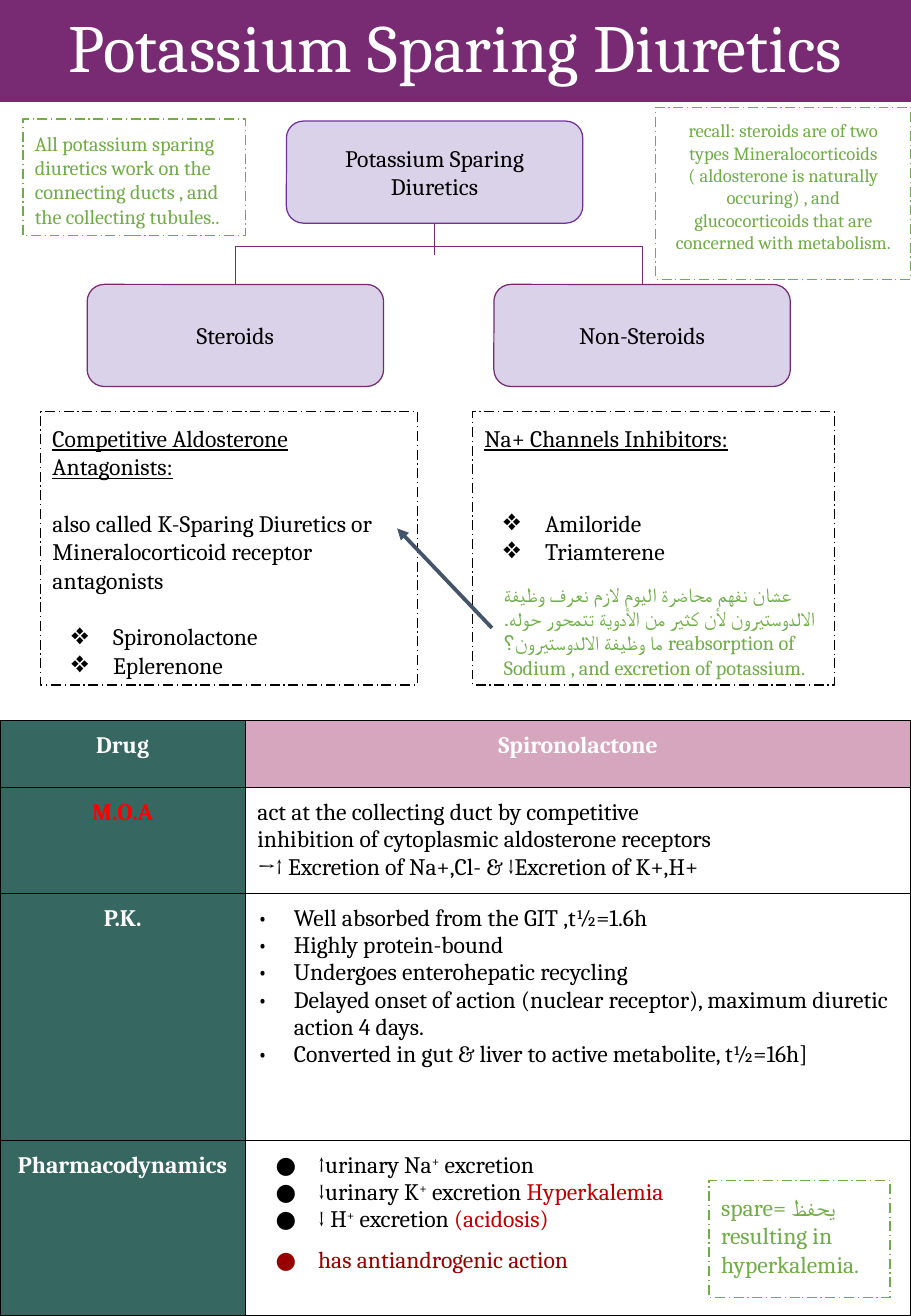
from dataclasses import dataclass
from typing import Any, Optional

import lxml.etree
import pptx
import pptx.dml.color
import pptx.enum.dml
import pptx.enum.shapes
import pptx.enum.text
import pptx.oxml.ns
import pptx.util

Pt = pptx.util.Pt
qn = pptx.oxml.ns.qn
Align = pptx.enum.text.PP_ALIGN
Anchor = pptx.enum.text.MSO_ANCHOR
Preset = pptx.enum.shapes.MSO_SHAPE


@dataclass(frozen=True)
class Theme:
    font: str = "Cambria"
    title_size: float = 40
    body_size: float = 14
    note_size: float = 12
    recall_size: float = 11
    purple: str = "782A72"
    violet: str = "7030A0"
    lavender: str = "D9D2E9"
    teal: str = "376761"
    pink: str = "D5A6BD"
    green: str = "70AD47"
    slate: str = "44546A"
    red: str = "FF0000"
    crimson: str = "C00000"
    maroon: str = "980000"
    black: str = "000000"
    white: str = "FFFFFF"


THEME = Theme()
MARGIN = 7.2
BLANK_LINE = 16.8


@dataclass(frozen=True)
class Piece:
    text: str
    color: Optional[str] = None
    superscript: bool = False


@dataclass(frozen=True)
class Line:
    pieces: tuple[Piece, ...]
    bullet: str = ""
    bullet_color: str = THEME.black
    indent: float = 36
    hanging: float = 25.2
    space_before: float = 0
    spacing: float = 1
    underline: bool = False


@dataclass(frozen=True)
class Box:
    left: float
    top: float
    width: float
    height: float
    lines: tuple[Line, ...]
    fill: Optional[str] = None
    outline: Optional[str] = None
    dashed: bool = False
    rounded: bool = False
    centered: bool = False
    anchor: Any = Anchor.TOP
    size: float = THEME.body_size
    color: str = THEME.black


@dataclass(frozen=True)
class Row:
    height: float
    label: str
    lines: tuple[Line, ...]
    label_color: str = THEME.white


def line(text: str, **options: Any) -> Line:
    return Line((Piece(text),), **options)


def diamond(text: str, space_before: float = 0) -> Line:
    return line(text, bullet="❖", space_before=space_before)


def ion_effect(ion: str, outcome: str = "") -> Line:
    """Bullet on the excretion of a positive ion, with its outcome in red."""
    pieces = [Piece(ion), Piece("+", superscript=True)]
    pieces.append(Piece(" excretion " if outcome else " excretion"))
    if outcome:
        pieces.append(Piece(outcome, THEME.crimson))
    return Line(tuple(pieces), bullet="●")


def rgb(color: str) -> pptx.dml.color.RGBColor:
    return pptx.dml.color.RGBColor.from_string(color)


def add_text(paragraph: Any, text: str, *, size: float, color: str, bold: bool = False,
             underline: bool = False, superscript: bool = False) -> None:
    """Add formatted text; a newline becomes a line break."""
    for index, part in enumerate(text.split("\n")):
        if index:
            paragraph.add_line_break()
        run = paragraph.add_run()
        run.text = part
        run.font.name = THEME.font
        run.font.size = Pt(size)
        run.font.color.rgb = rgb(color)
        run.font.bold = bold
        run.font.underline = underline
        if superscript:
            run._r.get_or_add_rPr().set("baseline", "30000")


def add_bullet(paragraph: Any, entry: Line) -> None:
    properties = paragraph._p.get_or_add_pPr()
    properties.set("marL", str(Pt(entry.indent)))
    properties.set("indent", str(-Pt(entry.hanging)))
    bullet_color = lxml.etree.SubElement(properties, qn("a:buClr"))
    lxml.etree.SubElement(bullet_color, qn("a:srgbClr"), val=entry.bullet_color)
    lxml.etree.SubElement(properties, qn("a:buFont"), typeface=THEME.font)
    lxml.etree.SubElement(properties, qn("a:buChar"), char=entry.bullet)


def write_lines(frame: Any, lines: tuple[Line, ...], *, size: float, color: str,
                centered: bool = False, bold: bool = False) -> None:
    frame.word_wrap = True
    for index, entry in enumerate(lines):
        paragraph = frame.add_paragraph() if index else frame.paragraphs[0]
        if entry.bullet:
            add_bullet(paragraph, entry)
        paragraph.alignment = Align.CENTER if centered else Align.LEFT
        paragraph.line_spacing = entry.spacing
        if entry.space_before:
            paragraph.space_before = Pt(entry.space_before)
        for piece in entry.pieces:
            add_text(paragraph, piece.text, size=size, color=piece.color or color, bold=bold,
                     underline=entry.underline, superscript=piece.superscript)


def add_box(slide: Any, box: Box) -> None:
    bounds = [Pt(value) for value in (box.left, box.top, box.width, box.height)]
    if box.fill or box.outline:
        preset = Preset.ROUNDED_RECTANGLE if box.rounded else Preset.RECTANGLE
        shape = slide.shapes.add_shape(preset, *bounds)
        shape.shadow.inherit = False
    else:
        shape = slide.shapes.add_textbox(*bounds)
    if box.fill:
        shape.fill.solid()
        shape.fill.fore_color.rgb = rgb(box.fill)
    else:
        shape.fill.background()
    if box.outline:
        shape.line.color.rgb = rgb(box.outline)
        shape.line.width = Pt(0.75)
        if box.dashed:
            shape.line.dash_style = pptx.enum.dml.MSO_LINE.LONG_DASH_DOT
    else:
        shape.line.fill.background()
    frame = shape.text_frame
    frame.margin_left = frame.margin_right = frame.margin_top = frame.margin_bottom = Pt(MARGIN)
    frame.vertical_anchor = box.anchor
    write_lines(frame, box.lines, size=box.size, color=box.color, centered=box.centered)


def add_line(slide: Any, start: tuple[float, float], end: tuple[float, float], *,
             color: str = THEME.purple, width: float = 0.75, arrow: bool = False) -> None:
    connector = slide.shapes.add_connector(
        pptx.enum.shapes.MSO_CONNECTOR.STRAIGHT, *(Pt(value) for value in start + end))
    connector.line.color.rgb = rgb(color)
    connector.line.width = Pt(width)
    if arrow:
        lxml.etree.SubElement(connector.line._get_or_add_ln(), qn("a:tailEnd"), type="triangle")
    lxml.etree.SubElement(connector._element.spPr, qn("a:effectLst"))


def fill_cell(cell: Any, lines: tuple[Line, ...], *, color: str, fill: Optional[str] = None,
              heading: bool = False) -> None:
    cell.margin_left = cell.margin_right = cell.margin_top = cell.margin_bottom = Pt(MARGIN)
    properties = cell._tc.get_or_add_tcPr()
    for side in ("lnL", "lnR", "lnT", "lnB"):
        border = lxml.etree.SubElement(properties, qn(f"a:{side}"), w=str(Pt(0.75)))
        solid = lxml.etree.SubElement(border, qn("a:solidFill"))
        lxml.etree.SubElement(solid, qn("a:srgbClr"), val=THEME.black)
    if fill:
        cell.fill.solid()
        cell.fill.fore_color.rgb = rgb(fill)
    else:
        cell.fill.background()
    write_lines(cell.text_frame, lines, size=THEME.body_size, color=color,
                centered=heading, bold=heading)


def add_drug_table(slide: Any, rows: tuple[Row, ...]) -> None:
    height = sum(row.height for row in rows)
    table = slide.shapes.add_table(len(rows), 2, Pt(0), Pt(427), Pt(540), Pt(height)).table
    table.first_row = table.horz_banding = False
    table.columns[0].width, table.columns[1].width = Pt(145.4), Pt(394.6)
    for index, row in enumerate(rows):
        header = index == 0
        table.rows[index].height = Pt(row.height)
        fill_cell(table.cell(index, 0), (line(row.label),), color=row.label_color,
                  fill=THEME.teal, heading=True)
        fill_cell(table.cell(index, 1), row.lines, heading=header,
                  color=THEME.white if header else THEME.black,
                  fill=THEME.pink if header else None)


def node(left: float, top: float, text: str, outline: str = THEME.purple) -> Box:
    return Box(left, top, 175.7, 60.5, (line(text),), fill=THEME.lavender, outline=outline,
               rounded=True, centered=True, anchor=Anchor.MIDDLE)


def note(left: float, top: float, width: float, height: float, *texts: str,
         outline: Optional[str] = THEME.green, **options: Any) -> Box:
    return Box(left, top, width, height, tuple(line(text) for text in texts), outline=outline,
               dashed=True, color=THEME.green, **options)


TITLE = Box(0, 0, 540, 60.5, (line("Potassium Sparing Diuretics", spacing=0.9),),
            fill=THEME.purple, centered=True, anchor=Anchor.MIDDLE,
            size=THEME.title_size, color=THEME.white)
ROOT = node(169.8, 71.8, "Potassium Sparing Diuretics", THEME.violet)
CLASSES = (node(292.8, 168.6, "Non-Steroids"), node(51.7, 168.6, "Steroids"))
DETAILS = (
    Box(24, 244, 223.4, 162, (
        line("Competitive Aldosterone Antagonists:", underline=True),
        line("also called K-Sparing Diuretics or", space_before=BLANK_LINE),
        line("Mineralocorticoid receptor antagonists"),
        diamond("Spironolactone", BLANK_LINE), diamond("Eplerenone"),
    ), outline=THEME.black, dashed=True),
    Box(280, 244, 214.6, 162, (
        line("Na+ Channels Inhibitors:", underline=True),
        diamond("Amiloride", 2 * BLANK_LINE), diamond("Triamterene"),
    ), outline=THEME.black, dashed=True),
)
DRUG_ROWS = (
    Row(39.6, "Drug", (line("Spironolactone"),)),
    Row(62.8, "M.O.A", (
        line("act at the collecting duct by competitive"),
        line("inhibition of cytoplasmic aldosterone receptors"),
        line("→↑ Excretion of Na+,Cl- & ↓Excretion of K+,H+"),
    ), THEME.red),
    Row(146.4, "P.K.", tuple(line(text, bullet="•", indent=21.6, hanging=21.6) for text in (
        "Well absorbed from the GIT ,t½=1.6h",
        "Highly protein-bound",
        "Undergoes enterohepatic recycling",
        "Delayed onset of action (nuclear receptor), maximum diuretic action 4 days.",
        "Converted in gut & liver to active metabolite, t½=16h]",
    ))),
    Row(104, "Pharmacodynamics", (
        ion_effect("↑urinary Na"),
        ion_effect("↓urinary K", "Hyperkalemia"),
        ion_effect("↓ H", "(acidosis)"),
        Line((Piece("has antiandrogenic action", THEME.maroon),), bullet="●",
             bullet_color=THEME.maroon, spacing=1.5),
    )),
)
NOTES = (
    note(13.6, 70.5, 131.8, 69.2, "All potassium sparing diuretics work on the connecting "
         "ducts , and the collecting tubules..", size=THEME.note_size),
    note(388.8, 63.6, 151.2, 102, "recall: steroids are of two types Mineralocorticoids\n"
         "( aldosterone is naturally occuring) , and glucocorticoids that are concerned with "
         "metabolism.", size=THEME.recall_size, centered=True),
    note(291.6, 337.7, 203, 69.2, "عشان نفهم محاضرة اليوم لازم نعرف وظيفة الالدوستيرون لأن كثير "
         "من الأدوية تتمحور حوله. ما وظيفة الالدوستيرون؟ reabsorption of Sodium , and "
         "excretion of potassium.", outline=None, size=THEME.note_size),
    note(420.3, 699.8, 107.3, 69.2, "spare= يحفظ", "resulting in hyperkalemia."),
)


def add_branches(slide: Any) -> None:
    bus_y = 146
    stem_x = ROOT.left + ROOT.width / 2
    centers = [child.left + child.width / 2 for child in CLASSES]
    add_line(slide, (stem_x, ROOT.top + ROOT.height), (stem_x, 151))
    add_line(slide, (min(centers), bus_y), (max(centers), bus_y))
    for center in centers:
        add_line(slide, (center, bus_y), (center, CLASSES[0].top))


def main() -> None:
    presentation = pptx.Presentation()
    presentation.slide_width, presentation.slide_height = Pt(540), Pt(780)
    slide = presentation.slides.add_slide(presentation.slide_layouts[6])
    for box in (TITLE, ROOT, *CLASSES, *DETAILS):
        add_box(slide, box)
    add_branches(slide)
    add_drug_table(slide, DRUG_ROWS)
    for box in NOTES:
        add_box(slide, box)
    add_line(slide, (291.6, 372.2), (235.4, 313.2), color=THEME.slate, width=2.25, arrow=True)
    presentation.save("out.pptx")


if __name__ == "__main__":
    main()
